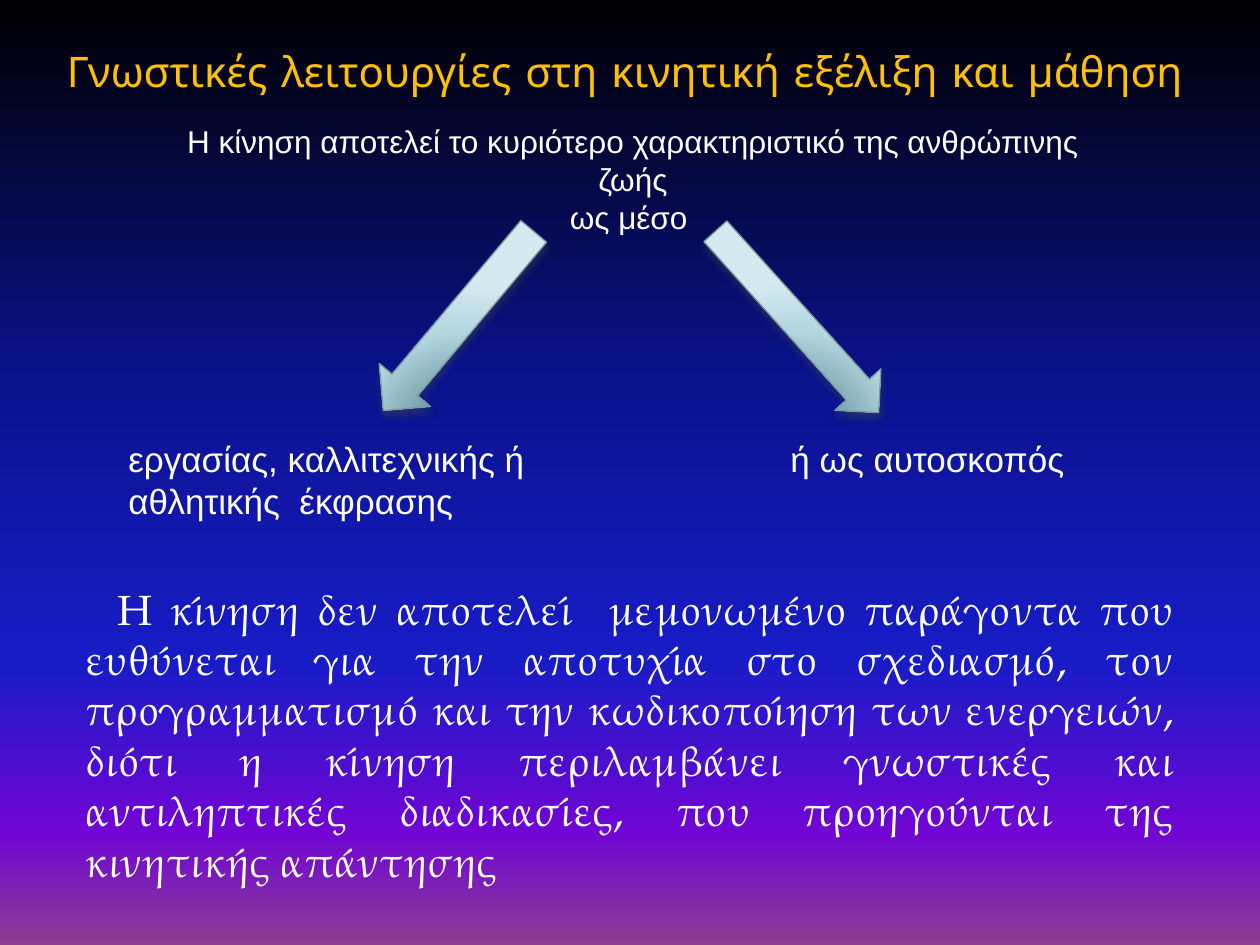
"""Build a slide on cognitive functions in motor development and learning."""
from lxml import etree
from pptx import Presentation, util as u
from pptx.dml.color import RGBColor
from pptx.enum import shapes, text
from pptx.oxml import ns

SCALE = u.Inches(1) / 126
WHITE, GOLD = "FFFFFF", "FFC000"
BACKGROUND = [(0, "000000"), (40, "0A128C"), (70, "181CC7"), (88, "7005D4"), (100, "8C3D91")]
ARROW_FILL = [(0, "4B7C89"), (68, "B5D7E0"), (100, "D4EAF1")]
LINEAR = '<a:lin ang="5400000" scaled="0"/>'
RADIAL = ('<a:path path="circle"><a:fillToRect l="50000" t="130000" '
          'r="50000" b="-30000"/></a:path>')


def px(length):
    """Turn pixels into EMU."""
    return u.Emu(round(length * SCALE))


def color(value):
    """Turn a hex string into a colour."""
    return RGBColor.from_string(value)


def drawing_xml(markup):
    """Parse one DrawingML element whose tag carries a namespace slot."""
    return etree.fromstring(markup.replace("NS", ns.nsdecls("a"), 1))


def set_gradient(fill, element, stops, direction):
    """Give the fill held by an element several gradient stops."""
    fill.solid()
    solid = next(element.iter(ns.qn("a:solidFill")))
    stop_list = "".join(f'<a:gs pos="{position * 1000}"><a:srgbClr val="{value}"/></a:gs>'
                        for position, value in stops)
    gradient = drawing_xml(f'<a:gradFill NS rotWithShape="0"><a:gsLst>{stop_list}</a:gsLst>'
                           f'{direction}</a:gradFill>')
    solid.getparent().replace(solid, gradient)


def place(shape, box):
    """Move and size a shape to a box in pixels."""
    shape.left, shape.top, shape.width, shape.height = map(px, box)


def write(shape, lines, size, font, value, align, indent=0, wrap=True):
    """Write one paragraph per line with a shared format."""
    frame = shape.text_frame
    frame.word_wrap = wrap
    frame.auto_size = text.MSO_AUTO_SIZE.SHAPE_TO_FIT_TEXT
    for index, line in enumerate(lines):
        paragraph = frame.add_paragraph() if index else frame.paragraphs[0]
        paragraph.alignment = align
        if indent:
            properties = paragraph._p.get_or_add_pPr()
            properties.set("marL", "0")
            properties.set("indent", str(px(indent)))
        run = paragraph.add_run()
        run.text = line
        run.font.size, run.font.name = u.Pt(size), font
        run.font.color.rgb = color(value)


def add_text(slide, box, *args, **options):
    """Add a text box with formatted lines."""
    write(slide.shapes.add_textbox(*map(px, box)), *args, **options)


def add_arrow(slide, kind, box, rotation):
    """Add a rotated block arrow with a gradient and a soft shadow."""
    arrow = slide.shapes.add_shape(kind, *map(px, box))
    arrow.rotation = rotation
    properties = arrow._element.spPr
    set_gradient(arrow.fill, properties, ARROW_FILL, RADIAL)
    arrow.line.color.rgb = color("7C98A0")
    arrow.line.width = u.Pt(0.75)
    arrow.shadow.inherit = False
    properties.find(ns.qn("a:effectLst")).append(drawing_xml(
        f'<a:outerShdw NS blurRad="{u.Pt(4.5)}" dist="{u.Pt(3)}" dir="5400000" '
        'rotWithShape="0"><a:srgbClr val="3B484C"><a:alpha val="48000"/></a:srgbClr>'
        '</a:outerShdw>'))


def main():
    """Build and save the slide."""
    presentation = Presentation()
    presentation.slide_width, presentation.slide_height = px(1260), px(945)
    slide = presentation.slides.add_slide(presentation.slide_layouts[5])
    set_gradient(slide.background.fill, slide.element, BACKGROUND, LINEAR)
    align, kinds = text.PP_ALIGN, shapes.MSO_SHAPE

    place(slide.shapes.title, (49, 39, 1166, 63))
    write(slide.shapes.title, ["Γνωστικές λειτουργίες στη κινητική εξέλιξη και μάθηση "],
          24, "Comic Neue", GOLD, align.CENTER)
    add_text(slide, (136, 116, 994, 89),
             ["Η κίνηση αποτελεί το κυριότερο χαρακτηριστικό της ανθρώπινης ζωής", "ως μέσο "],
             18, "Arial", WHITE, align.CENTER, wrap=False)
    add_arrow(slide, kinds.DOWN_ARROW, (425, 204, 67, 234), 40)
    add_text(slide, (84, 431, 599, 97), ["εργασίας, καλλιτεχνικής ή", "αθλητικής  έκφρασης"],
             20, "Arial", WHITE, align.LEFT, indent=32)
    add_arrow(slide, kinds.RIGHT_ARROW, (675, 291, 244, 62), 48)
    add_text(slide, (777, 431, 301, 55), ["ή ως αυτοσκοπός"],
             20, "Arial", WHITE, align.CENTER, wrap=False)
    add_text(slide, (73, 577, 1113, 267),
             ["Η κίνηση δεν αποτελεί  μεμονωμένο παράγοντα που ευθύνεται για την αποτυχία "
              "στο σχεδιασμό, τον προγραμματισμό και την κωδικοποίηση των ενεργειών, διότι "
              "η κίνηση περιλαμβάνει γνωστικές και αντιληπτικές διαδικασίες, που "
              "προηγούνται της κινητικής απάντησης"],
             24, "TeX Gyre Pagella", WHITE, align.JUSTIFY, indent=32)
    presentation.save("out.pptx")


if __name__ == "__main__":
    main()
